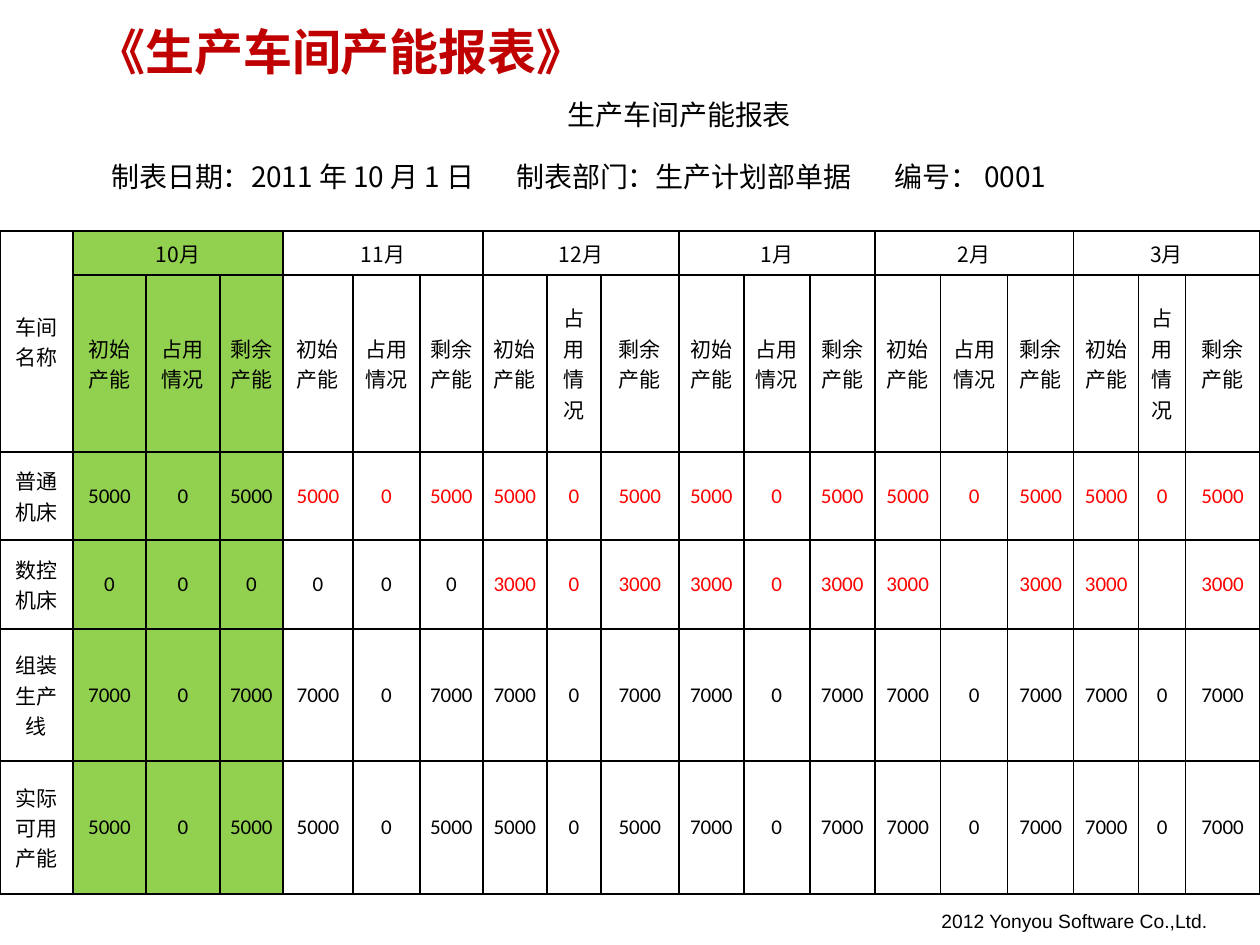
import lxml.etree
import pptx
import pptx.dml.color
import pptx.enum.text
import pptx.oxml.ns
import pptx.util

SCALE = 914400 / 126
THEME = {
    "black": "000000", "red": "FF0000", "title": "C00000", "green": "92D050",
    "cjk": "Noto Sans CJK SC", "number": "Calibri", "footer": "Arial",
    "title_size": 28, "heading_size": 16, "table_size": 12, "footer_size": 11,
}
CENTER = pptx.enum.text.PP_ALIGN.CENTER
LEFT = pptx.enum.text.PP_ALIGN.LEFT
MIDDLE = pptx.enum.text.MSO_ANCHOR.MIDDLE
TOP = pptx.enum.text.MSO_ANCHOR.TOP


def px(value):
    return pptx.util.Emu(round(value * SCALE))


def write(text_frame, lines, alignment, color, font_name, size, bold=False):
    for index, line in enumerate(lines):
        paragraph = text_frame.paragraphs[0] if index == 0 else text_frame.add_paragraph()
        paragraph.alignment = alignment
        run = paragraph.add_run()
        run.text = line
        font_format = {"name": font_name, "size": pptx.util.Pt(size), "bold": bold}
        for name, value in font_format.items():
            setattr(run.font, name, value)
        run.font.color.rgb = pptx.dml.color.RGBColor.from_string(color)
        east_asian = lxml.etree.SubElement(run.font._element, pptx.oxml.ns.qn("a:ea"))
        east_asian.set("typeface", THEME["cjk"])


presentation = pptx.Presentation()
presentation.slide_width = px(1260)
presentation.slide_height = px(945)
slide = presentation.slides.add_slide(presentation.slide_layouts[6])

text_boxes = [
    ((929, 903, 293, 37), ["2012 Yonyou Software Co.,Ltd."], LEFT,
     THEME["black"], THEME["footer"], THEME["footer_size"], False, TOP, False),
    ((84, 10, 966, 81), ["《生产车间产能报表》"], LEFT,
     THEME["title"], THEME["cjk"], THEME["title_size"], True, MIDDLE, True),
    ((63, 88, 1197, 115),
     ["生产车间产能报表", "制表日期：2011 年 10 月 1 日\t制表部门：生产计划部单据\t编号： 0001"], CENTER,
     THEME["black"], THEME["cjk"], THEME["heading_size"], False, MIDDLE, True),
]
for bounds, lines, alignment, color, font_name, size, bold, anchor, wrap in text_boxes:
    shape = slide.shapes.add_textbox(*map(px, bounds))
    frame_format = {"word_wrap": wrap, "vertical_anchor": anchor}
    for name, value in frame_format.items():
        setattr(shape.text_frame, name, value)
    write(shape.text_frame, lines, alignment, color, font_name, size, bold)

heading, details = shape.text_frame.paragraphs
details.alignment = LEFT
details.space_before = pptx.util.Pt(16)
for paragraph in (heading, details):
    properties = paragraph._p.get_or_add_pPr()
    properties.set("marL", "0")
    properties.set("indent", str(px(36)))
tab_list = lxml.etree.SubElement(details._p.get_or_add_pPr(), pptx.oxml.ns.qn("a:tabLst"))
for position in (477, 887):
    tab = lxml.etree.SubElement(tab_list, pptx.oxml.ns.qn("a:tab"))
    tab.set("pos", str(px(position)))
    tab.set("algn", "l")

column_widths = [73, 73, 74, 63, 70, 67, 63, 64, 54, 78, 65, 66, 65, 66, 67, 66, 65, 47, 74]
row_heights = [44, 177, 88, 89, 132, 133]
months = ["10月", "11月", "12月", "1月", "2月", "3月"]
measures = ["初始\n产能", "占用\n情况", "剩余\n产能"]
unbroken_columns = {5, 7, 9}
workshops = [
    ("普通机床", [5000] * 6, range(1, 6), ()),
    ("数控机床", [0, 0, 3000, 3000, 3000, 3000], range(2, 6), (4, 5)),
    ("组装生产线", [7000] * 6, (), ()),
    ("实际可用产能", [5000, 5000, 5000, 7000, 7000, 7000], (), ()),
]

header = ["车间\n名称"]
subheader = [""]
for month in months:
    header += [month, "", ""]
    subheader += measures
for column in unbroken_columns:
    subheader[column] = subheader[column].replace("\n", "")
rows = [header, subheader]
red_cells = set()
for row, (workshop, capacities, red_months, blank_months) in enumerate(workshops, 2):
    values = [workshop]
    for month, capacity in enumerate(capacities):
        values += [str(capacity), "" if month in blank_months else "0", str(capacity)]
        if month in red_months:
            red_cells.update((row, 1 + 3 * month + offset) for offset in range(3))
    rows.append(values)

table = slide.shapes.add_table(
    len(rows), len(header), px(0), px(231), px(sum(column_widths)), px(sum(row_heights))
).table
for name, value in {"first_row": False, "horz_banding": False}.items():
    setattr(table, name, value)
for column, width in zip(table.columns, column_widths):
    column.width = px(width)
for row, height in zip(table.rows, row_heights):
    row.height = px(height)

cell_format = {"margin_left": px(9), "margin_right": px(9), "margin_top": 0,
               "margin_bottom": 0, "vertical_anchor": MIDDLE}
for row, values in enumerate(rows):
    for column, text in enumerate(values):
        cell = table.cell(row, column)
        for name, value in cell_format.items():
            setattr(cell, name, value)
        if text:
            color = THEME["red"] if (row, column) in red_cells else THEME["black"]
            font_name = THEME["cjk"] if row == 0 and column else THEME["number"]
            write(cell.text_frame, text.split("\n"), CENTER, color, font_name, THEME["table_size"])
        cell_properties = cell._tc.get_or_add_tcPr()
        for side in ("lnL", "lnR", "lnT", "lnB"):
            line = lxml.etree.SubElement(cell_properties, pptx.oxml.ns.qn("a:" + side))
            line.set("w", str(pptx.util.Pt(1)))
            fill = lxml.etree.SubElement(line, pptx.oxml.ns.qn("a:solidFill"))
            lxml.etree.SubElement(fill, pptx.oxml.ns.qn("a:srgbClr")).set("val", THEME["black"])
        if 1 <= column <= 3:
            cell.fill.solid()
            cell.fill.fore_color.rgb = pptx.dml.color.RGBColor.from_string(THEME["green"])
        else:
            cell.fill.background()

table.cell(0, 0).merge(table.cell(1, 0))
for column in range(1, len(header), 3):
    table.cell(0, column).merge(table.cell(0, column + 2))

presentation.save("out.pptx")
